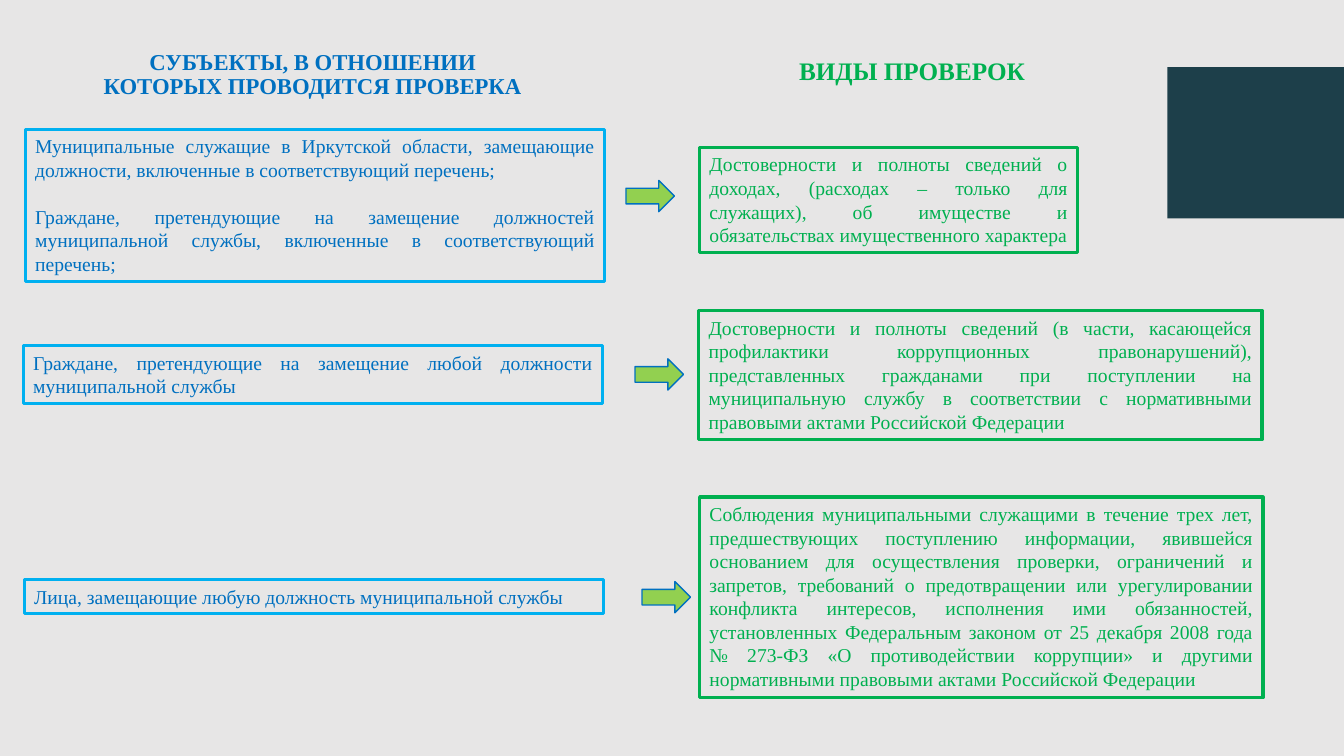
import pptx
import pptx.util
import pptx.dml.color
import pptx.enum.shapes
import pptx.enum.text

Pt = pptx.util.Pt
RGBColor = pptx.dml.color.RGBColor
SHAPE = pptx.enum.shapes.MSO_SHAPE
ALIGN = pptx.enum.text.PP_ALIGN
ANCHOR = pptx.enum.text.MSO_ANCHOR

FONT = "Times New Roman"
GRAY = RGBColor(0xE7, 0xE6, 0xE6)
TEAL = RGBColor(0x1D, 0x3F, 0x4A)
BLUE = RGBColor(0x00, 0x70, 0xC0)
SKY = RGBColor(0x00, 0xB0, 0xF0)
GREEN = RGBColor(0x00, 0xB0, 0x50)
LIME = RGBColor(0x92, 0xD0, 0x50)

SUBJECTS = [
    (18, 92.2, 414, 108.7, [
        "Муниципальные служащие в Иркутской области, замещающие должности, "
        "включенные в соответствующий перечень;",
        "Граждане, претендующие на замещение должностей муниципальной службы, "
        "включенные в соответствующий перечень;"]),
    (16.6, 247, 414, 41.2, [
        "Граждане, претендующие на замещение любой должности муниципальной службы"]),
    (17.3, 414, 414, 24.2, [
        "Лица, замещающие любую должность муниципальной службы"]),
]
CHECKS = [
    (499.7, 105.3, 270, 75, [
        "Достоверности и полноты сведений о доходах, (расходах – только для "
        "служащих), об имуществе и обязательствах имущественного характера"]),
    (499, 221.8, 402.5, 92.2, [
        "Достоверности и полноты сведений (в части, касающейся профилактики "
        "коррупционных правонарушений), представленных гражданами при поступлении "
        "на муниципальную службу в соответствии с нормативными правовыми актами "
        "Российской Федерации"]),
    (499.7, 355, 402.5, 143.3, [
        "Соблюдения муниципальными служащими в течение трех лет, предшествующих "
        "поступлению информации, явившейся основанием для осуществления проверки, "
        "ограничений и запретов, требований о предотвращении или урегулировании "
        "конфликта интересов, исполнения ими обязанностей, установленных "
        "Федеральным законом от 25 декабря 2008 года № 273-ФЗ «О противодействии "
        "коррупции» и другими нормативными правовыми актами Российской Федерации"]),
]
ARROWS = [(447.1, 128.9), (453.6, 256.3), (458.6, 415.4)]


def style(p, size, color, align, bold=False):
    """Set the font and alignment of a paragraph."""
    p.alignment = align
    p.font.name = FONT
    p.font.size = Pt(size)
    p.font.bold = bold
    p.font.color.rgb = color


def add_shape(s, kind, box, fill=None, line=None, width=1):
    """Add a flat preset shape with optional fill and outline."""
    sp = s.shapes.add_shape(kind, *map(Pt, box))
    sp.shadow.inherit = False
    if fill is None:
        sp.fill.background()
    else:
        sp.fill.solid()
        sp.fill.fore_color.rgb = fill
    if line is None:
        sp.line.fill.background()
    else:
        sp.line.color.rgb = line
        sp.line.width = Pt(width)
    return sp


def add_card(s, box, texts, line, color):
    """Add an outlined box of justified text."""
    tf = add_shape(s, SHAPE.RECTANGLE, box, line=line, width=2.25).text_frame
    tf.word_wrap = True
    tf.vertical_anchor = ANCHOR.TOP
    for i, text in enumerate(texts):
        p = tf.paragraphs[0] if i == 0 else tf.add_paragraph()
        p.text = text
        style(p, 14, color, ALIGN.JUSTIFY)
        if i:
            p.space_before = Pt(16.8)


def add_heading(s, box, text, size, color, spacing=1.0, wrap=True):
    """Add a bold centred column heading."""
    tf = s.shapes.add_textbox(*map(Pt, box)).text_frame
    tf.word_wrap = wrap
    tf.vertical_anchor = ANCHOR.MIDDLE
    p = tf.paragraphs[0]
    p.text = text
    p.line_spacing = spacing
    style(p, size, color, ALIGN.CENTER, bold=True)


def main():
    """Build the slide and save it."""
    prs = pptx.Presentation()
    prs.slide_width, prs.slide_height = Pt(960), Pt(540)
    s = prs.slides.add_slide(prs.slide_layouts[6])
    s.background.fill.solid()
    s.background.fill.fore_color.rgb = GRAY
    add_shape(s, SHAPE.RECTANGLE, (833.8, 48, 126.2, 108), fill=TEAL)
    add_heading(s, (60.5, 29.5, 325.4, 48.2),
                "СУБЪЕКТЫ, В ОТНОШЕНИИ КОТОРЫХ ПРОВОДИТСЯ ПРОВЕРКА",
                16.2, BLUE, spacing=0.9)
    add_heading(s, (563, 36, 177.1, 28.8), "ВИДЫ ПРОВЕРОК", 18, GREEN, wrap=False)
    for *box, texts in SUBJECTS:
        add_card(s, box, texts, SKY, BLUE)
    for *box, texts in CHECKS:
        add_card(s, box, texts, GREEN, GREEN)
    for left, top in ARROWS:
        add_shape(s, SHAPE.RIGHT_ARROW, (left, top, 34.6, 22.3), LIME, BLUE)
    prs.save("out.pptx")


if __name__ == "__main__":
    main()
